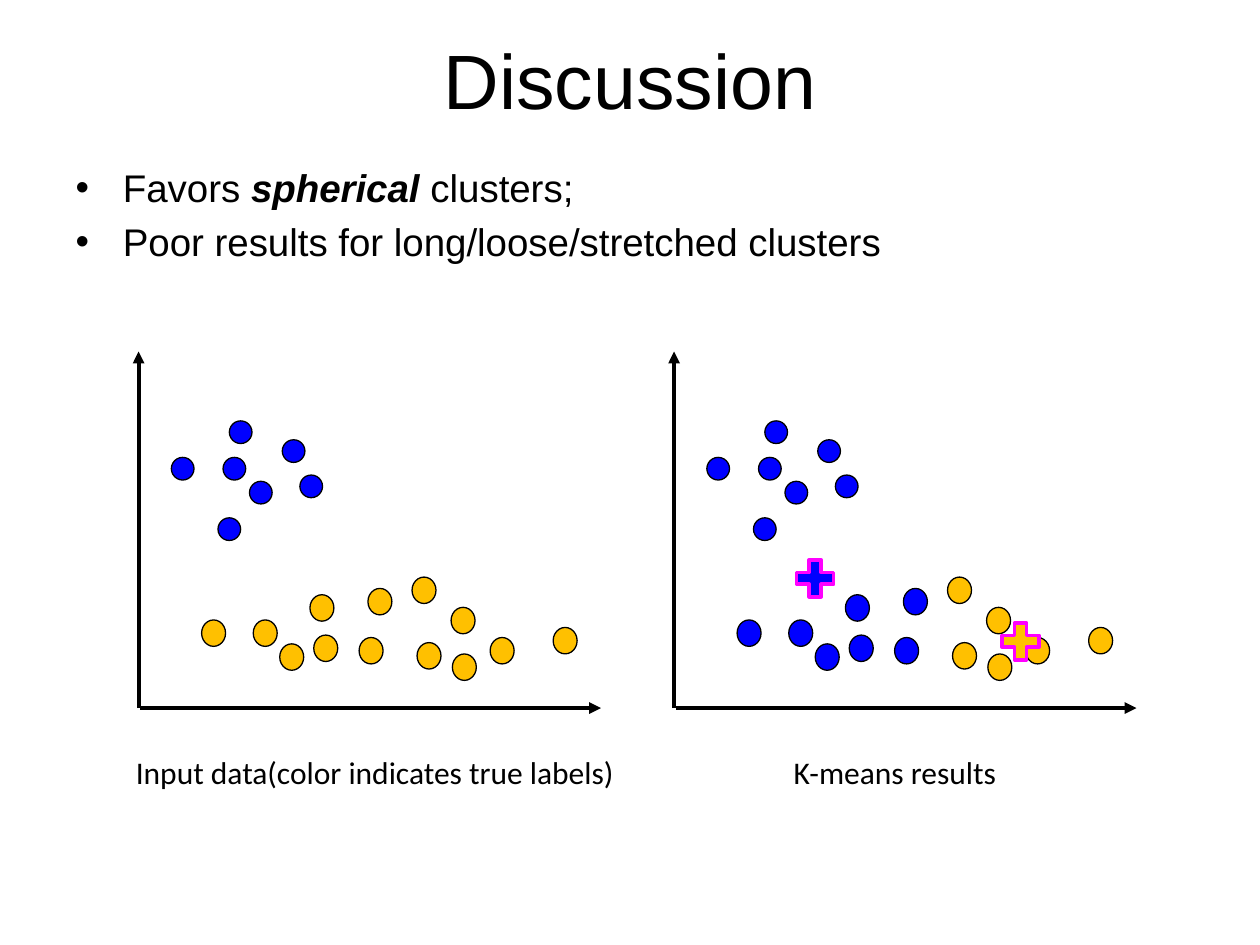
from lxml.etree import SubElement
from pptx import Presentation
from pptx.dml.color import RGBColor
from pptx.enum.shapes import MSO_CONNECTOR, MSO_SHAPE
from pptx.enum.text import MSO_ANCHOR, MSO_AUTO_SIZE, PP_ALIGN
from pptx.oxml.ns import qn
from pptx.util import Inches, Pt

COLOURS = {"ink": "000000", "blue": "0000FF", "gold": "FFC000", "centre": "FF00FF"}
COLUMNS, ROWS = 100, 75

ROUND_CLUSTER = [(11.4, 7), (12.8, 9.8), (6.7, 8.4), (8.8, 10.3), (2.6, 8.4), (7.2, 5.5), (6.3, 13.2)]
LONG_CLUSTER = [
    (21.7, 17.9), (32.9, 21.9), (22.1, 23.1), (13.9, 22.5), (9.1, 21.3),
    (11.2, 23.2), (5, 21.3), (13.6, 19.3), (17.5, 22.7), (24.9, 24),
    (18.2, 18.8), (24.8, 20.3), (27.9, 22.7),
]
CENTRES = [(9.2, 16, "blue"), (25.5, 21, "gold")]
PLOT_LEFTS = (11, 53.5)
PLOT_TOP, PLOT_HEIGHT, PLOT_WIDTH = 27.9, 28.3, 36.7
KMEANS_BORDER = 20


class SlideBuilder:
    def __init__(self, deck):
        self.page = deck.slides.add_slide(deck.slide_layouts[1])
        self.column = deck.slide_width / COLUMNS
        self.row = deck.slide_height / ROWS

    def place(self, left, top, width, height):
        return [int(left * self.column), int(top * self.row),
                int(width * self.column), int(height * self.row)]

    def colour(self, name):
        return RGBColor.from_string(COLOURS[name])

    def style(self, para, size, face):
        para.font.size = Pt(size)
        para.font.name = face
        para.font.color.rgb = self.colour("ink")

    def move(self, box, *area):
        box.left, box.top, box.width, box.height = self.place(*area)

    def title(self, text, *area):
        box = self.page.shapes.title
        self.move(box, *area)
        box.text_frame.text = text
        box.text_frame.vertical_anchor = MSO_ANCHOR.MIDDLE
        para = box.text_frame.paragraphs[0]
        para.alignment = PP_ALIGN.CENTER
        self.style(para, 44, "Arial")

    def bullets(self, items, *area):
        box = self.page.placeholders[1]
        self.move(box, *area)
        frame = box.text_frame
        for index, pieces in enumerate(items):
            para = frame.add_paragraph() if index else frame.paragraphs[0]
            self.style(para, 22, "Arial")
            for text, strong in pieces:
                span = para.add_run()
                span.text = text
                if strong:
                    span.font.bold = span.font.italic = True

    def caption(self, text, *area):
        box = self.page.shapes.add_textbox(*self.place(*area))
        frame = box.text_frame
        frame.word_wrap = False
        frame.auto_size = MSO_AUTO_SIZE.SHAPE_TO_FIT_TEXT
        frame.text = text
        self.style(frame.paragraphs[0], 18, "Calibri")

    def arrow(self, *ends):
        line = self.page.shapes.add_connector(MSO_CONNECTOR.STRAIGHT, *self.place(*ends))
        line.line.color.rgb = self.colour("ink")
        line.line.width = Pt(2.25)
        SubElement(line.line._get_or_add_ln(), qn("a:tailEnd"), type="triangle")
        SubElement(line._element.spPr, qn("a:effectLst"))

    def marker(self, kind, fill, outline, weight, *area):
        shape = self.page.shapes.add_shape(kind, *self.place(*area))
        shape.shadow.inherit = False
        shape.fill.solid()
        shape.fill.fore_color.rgb = self.colour(fill)
        shape.line.color.rgb = self.colour(outline)
        shape.line.width = Pt(weight)

    def dot(self, fill, *area):
        self.marker(MSO_SHAPE.OVAL, fill, "ink", 0.75, *area)

    def plot(self, left, clustered):
        bottom = PLOT_TOP + PLOT_HEIGHT
        self.arrow(left, bottom, left, PLOT_TOP)
        self.arrow(left + 0.15, bottom, left + PLOT_WIDTH, bottom)
        for x, y in ROUND_CLUSTER:
            self.dot("blue", left + x, PLOT_TOP + y, 1.8, 1.8)
        for x, y in LONG_CLUSTER:
            fill = "blue" if clustered and x < KMEANS_BORDER else "gold"
            self.dot(fill, left + x, PLOT_TOP + y, 1.9, 2.1)
        if clustered:
            for x, y, fill in CENTRES:
                self.marker(MSO_SHAPE.MATH_PLUS, fill, "centre", 2, left + x, PLOT_TOP + y, 4, 4)


def main():
    deck = Presentation()
    deck.slide_width, deck.slide_height = Inches(10), Inches(7.5)
    builder = SlideBuilder(deck)
    builder.title("Discussion", 5, 0, 90, 12.5)
    builder.bullets([
        [("Favors ", False), ("spherical", True), (" clusters;", False)],
        [("Poor results for long/loose/stretched clusters", False)],
    ], 5, 12.5, 90, 54.5)
    for left, clustered in zip(PLOT_LEFTS, (False, True)):
        builder.plot(left, clustered)
    builder.caption("Input data(color indicates true labels)", 9.8, 59.3, 40.4, 4)
    builder.caption("K-means results", 62, 59.3, 18.3, 4)
    deck.save("out.pptx")


if __name__ == "__main__":
    main()
